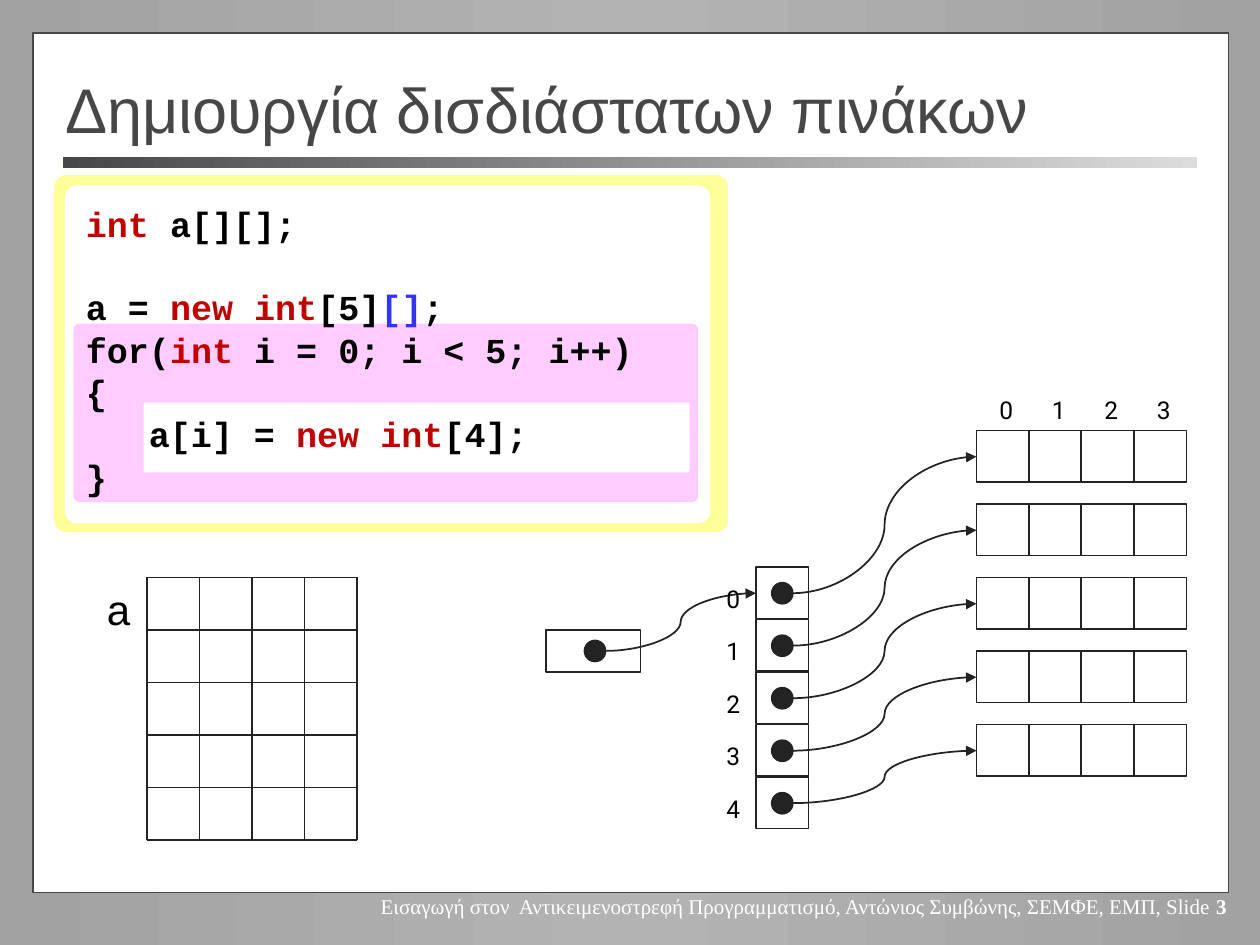
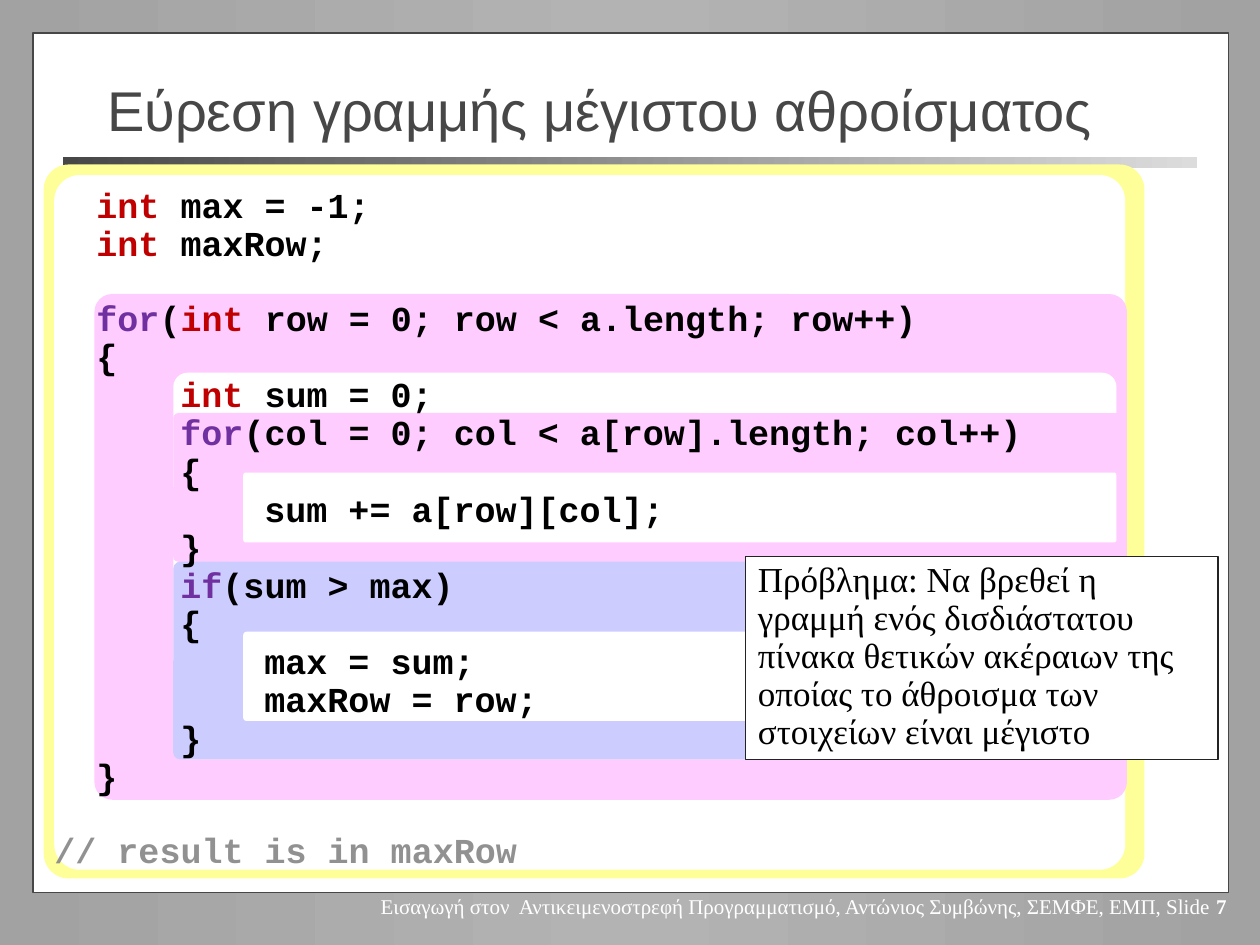
from copy import deepcopy

from pptx import Presentation
from pptx import util as u
from pptx.dml import color as dml
from pptx.enum import shapes, text
from pptx.oxml import ns, xmlchemy

# Shared style
INK, GREY, BLACK, WHITE = "232323", "474747", "000000", "FFFFFF"
YELLOW, PINK, LILAC = "FFFF99", "FFCCFF", "CCCCFF"
RED, PURPLE, BLUE, COMMENT = "C00000", "7030A0", "3333FF", "919191"
KEYWORDS = {"int": RED, "new int": RED, "for": PURPLE, "if": PURPLE, "[]": BLUE}
SANS, MONO, LABEL, SERIF = "Arial", "Courier New", "Roboto", "Times New Roman"
FOOTER = ("Εισαγωγή στον  Αντικειμενοστρεφή Προγραμματισμό, "
          "Αντώνιος Συμβώνης, ΣΕΜΦΕ, ΕΜΠ, Slide ")
CODE_SIZE, CODE_GAP = 20, 5
CHARACTER, LINE = 0.6 * CODE_SIZE, 1.13 * CODE_SIZE
CELL = 30


def rgb(value):
    return dml.RGBColor.from_string(value)


def points(*values):
    return [u.Pt(value) for value in values]


def gradient(fill, owner, colours):
    """Fill from left to right with evenly spaced colours."""
    fill.gradient()
    fill.gradient_angle = 0
    stops = owner.find(".//" + ns.qn("a:gsLst"))
    while len(stops) < len(colours):
        stops.append(deepcopy(stops[0]))
    for index, (stop, colour) in enumerate(zip(fill.gradient_stops, colours)):
        stop.position = index / (len(colours) - 1)
        stop.color.rgb = rgb(colour)


class Pages:
    def __init__(self):
        self.deck = Presentation()
        self.deck.slide_width, self.deck.slide_height = points(720, 540)
        master = self.deck.slide_master
        gradient(master.background.fill, master.element,
                 ["A2A2A2", "B3B3B3", "A2A2A2"])
        self.page = None

    def start(self, number):
        """Add a page with its white sheet, title rule and footer."""
        self.page = self.deck.slides.add_slide(self.deck.slide_layouts[5])
        self.shape("RECTANGLE", 19, 19, 683, 491, WHITE, GREY)
        rule = self.shape("RECTANGLE", 36, 90, 648, 6)
        gradient(rule.fill, rule.element, [GREY, "DCDCDC"])
        para = self.text(FOOTER, 201, 507, 507, 21.6, 12, SERIF, WHITE,
                         wrap=False)
        para.alignment = text.PP_ALIGN.RIGHT
        span = para.add_run()
        span.text = str(number)
        span.font.bold = True

    def title(self, words, left, width, size):
        box = self.page.shapes.title
        self.page.shapes.element.append(box.element)  # bring to the front
        box.left, box.top, box.width, box.height = points(left, 39.6, width, 45)
        box.text_frame.text = words
        box.text_frame.auto_size = text.MSO_AUTO_SIZE.NONE
        box.text_frame.vertical_anchor = text.MSO_ANCHOR.MIDDLE
        para = box.text_frame.paragraphs[0]
        para.alignment = text.PP_ALIGN.LEFT
        self.font(para, size, SANS, GREY)

    def font(self, para, size, name, colour, bold=False):
        para.font.size, para.font.name, para.font.bold = u.Pt(size), name, bold
        para.font.color.rgb = rgb(colour)

    def paint(self, box, fill=None, line=None):
        if fill:
            box.fill.solid()
            box.fill.fore_color.rgb = rgb(fill)
        else:
            box.fill.background()
        if line:
            box.line.color.rgb = rgb(line)
            box.line.width = u.Pt(1)
        else:
            box.line.fill.background()

    def shape(self, kind, left, top, width, height, fill=None, line=None):
        box = self.page.shapes.add_shape(
            getattr(shapes.MSO_SHAPE, kind), *points(left, top, width, height))
        box.shadow.inherit = False
        self.paint(box, fill, line)
        return box

    def panels(self, *panels):
        for left, top, width, height, fill in panels:
            box = self.shape("ROUNDED_RECTANGLE", left, top, width, height, fill)
            box.adjustments[0] = 0.037 if fill == WHITE else 0.035

    def cell(self, left, top, width=CELL, height=29.5):
        self.shape("RECTANGLE", left, top, width, height, line=INK)

    def text(self, words, left, top, width, height, size, name, colour=BLACK,
             wrap=True, fill=None, line=None):
        box = self.page.shapes.add_textbox(*points(left, top, width, height))
        self.paint(box, fill, line)
        box.text_frame.word_wrap = wrap
        para = box.text_frame.paragraphs[0]
        para.add_run().text = words
        self.font(para, size, name, colour)
        return para

    def label(self, words, left, top, size=14, name=LABEL):
        para = self.text(words, left, top, 22.5, 24, size, name, wrap=False)
        para.space_before = u.Pt(2)

    def line(self, start, end, curved=False):
        kind = shapes.MSO_CONNECTOR.CURVE if curved else shapes.MSO_CONNECTOR.STRAIGHT
        link = self.page.shapes.add_connector(kind, *points(*start, *end))
        link.line.color.rgb = rgb(INK)
        link.line.width = u.Pt(1)
        properties = link.element.spPr
        if curved:
            outline = properties.find(ns.qn("a:ln"))
            head = xmlchemy.OxmlElement("a:tailEnd")
            head.set("type", "triangle")
            outline.append(head)
        properties.append(xmlchemy.OxmlElement("a:effectLst"))

    def pointer(self, left, top, end):
        """Draw a dot and a curved arrow from its right side."""
        self.line((left + 12, top + 6), end, curved=True)
        self.shape("OVAL", left, top, 12, 12, INK, INK)

    def code(self, left, top, width, height, spacing, rows):
        """Rows are (columns, text, blank lines above); |word| is coloured."""
        box = self.page.shapes.add_textbox(*points(left, top, width, height))
        frame = box.text_frame
        frame.word_wrap = True
        for index, (columns, words, blanks) in enumerate(rows):
            para = frame.add_paragraph() if index else frame.paragraphs[0]
            para.line_spacing = spacing
            para.space_before = u.Pt(
                round(CODE_GAP + blanks * (CODE_GAP + spacing * LINE), 1))
            indent = para._p.get_or_add_pPr()
            indent.set("marL", str(u.Pt(columns * CHARACTER)))
            indent.set("indent", "0")
            self.font(para, CODE_SIZE, MONO, BLACK, bold=True)
            for part, piece in enumerate(words.split("|")):
                if piece:
                    span = para.add_run()
                    span.text = piece
                    if part % 2:
                        span.font.color.rgb = rgb(KEYWORDS.get(piece, COMMENT))


def creation_page(pages):
    pages.start(3)
    pages.panels((31, 100, 385, 204, YELLOW), (37, 106, 369, 193, WHITE),
                 (42, 185, 357, 102, PINK), (82, 230, 312, 40, WHITE))
    pages.title("Δημιουργία δισδιάστατων πινάκων", 30, 660, 36)

    # Reference to the array of rows
    pages.cell(312, 360, 54, 24)
    pages.pointer(334, 366, (432, 339))

    # Each row reference points to its own array
    for row in range(5):
        top, target = 324 + row * CELL, 246 + row * 42
        pages.cell(432, top)
        pages.label(str(row), 408, top + 6)
        pages.pointer(441, top + 9, (558, target + 15))
        for column in range(4):
            pages.cell(558 + column * CELL, target)
    for column in range(4):
        pages.label(str(column), 564 + column * CELL, 222)

    # Plain grid of the same array
    pages.label("a", 54, 330, 24, SANS)
    left, top, right, bottom = 84, 330, 84 + 4 * CELL, 330 + 5 * CELL
    for x in range(left, right + 1, CELL):
        pages.line((x, top), (x, bottom))
    for y in range(top, bottom + 1, CELL):
        pages.line((left, y), (right, y))

    pages.code(42, 117, 354, 173, 0.8, [
        (0, "|int| a[][];", 0),
        (0, "a = |new int|[5]|[]|;", 1),
        (0, "for(|int| i = 0; i < 5; i++)", 0),
        (0, "{", 0),
        (3, "a[i] = |new int|[4];", 0),
        (0, "}", 0),
    ])


def maximum_page(pages):
    pages.start(7)
    pages.panels((25, 94, 629, 408, YELLOW), (31, 100, 612, 397, WHITE),
                 (54, 168, 590, 289, PINK), (99, 213, 539, 221, WHITE),
                 (99, 236, 544, 85, PINK), (139, 270, 499, 40, WHITE),
                 (99, 321, 539, 113, LILAC), (139, 361, 493, 51, WHITE))
    pages.title("Εύρεση γραμμής μέγιστου αθροίσματος", 54, 612, 32)
    pages.code(24, 108, 624, 397, 0.7, [
        (2, "|int| max = -1;", 0),
        (2, "|int| maxRow;", 0),
        (2, "|for|(|int| row = 0; row < a.length; row++)", 1),
        (2, "{", 0),
        (6, "|int| sum = 0;", 0),
        (6, "|for|(col = 0; col < a[row].length; col++)", 0),
        (6, "{", 0),
        (10, "sum += a[row][col];", 0),
        (6, "}", 0),
        (6, "|if|(sum > max)", 0),
        (6, "{", 0),
        (10, "max = sum;", 0),
        (10, "maxRow = row;", 0),
        (6, "}", 0),
        (2, "}", 0),
        (0, "|// result is in maxRow|", 1),
    ])

    # Problem statement
    para = pages.text(
        "Πρόβλημα: Να βρεθεί η γραμμή ενός δισδιάστατου πίνακα θετικών ακέραιων "
        "της οποίας το άθροισμα των στοιχείων είναι μέγιστο",
        426, 318, 270, 116, 20, SERIF, fill=WHITE, line=INK)
    para.line_spacing = 0.9
    para.space_before = u.Pt(4)


def main():
    pages = Pages()
    creation_page(pages)
    maximum_page(pages)
    pages.deck.save("out.pptx")


if __name__ == "__main__":
    main()
